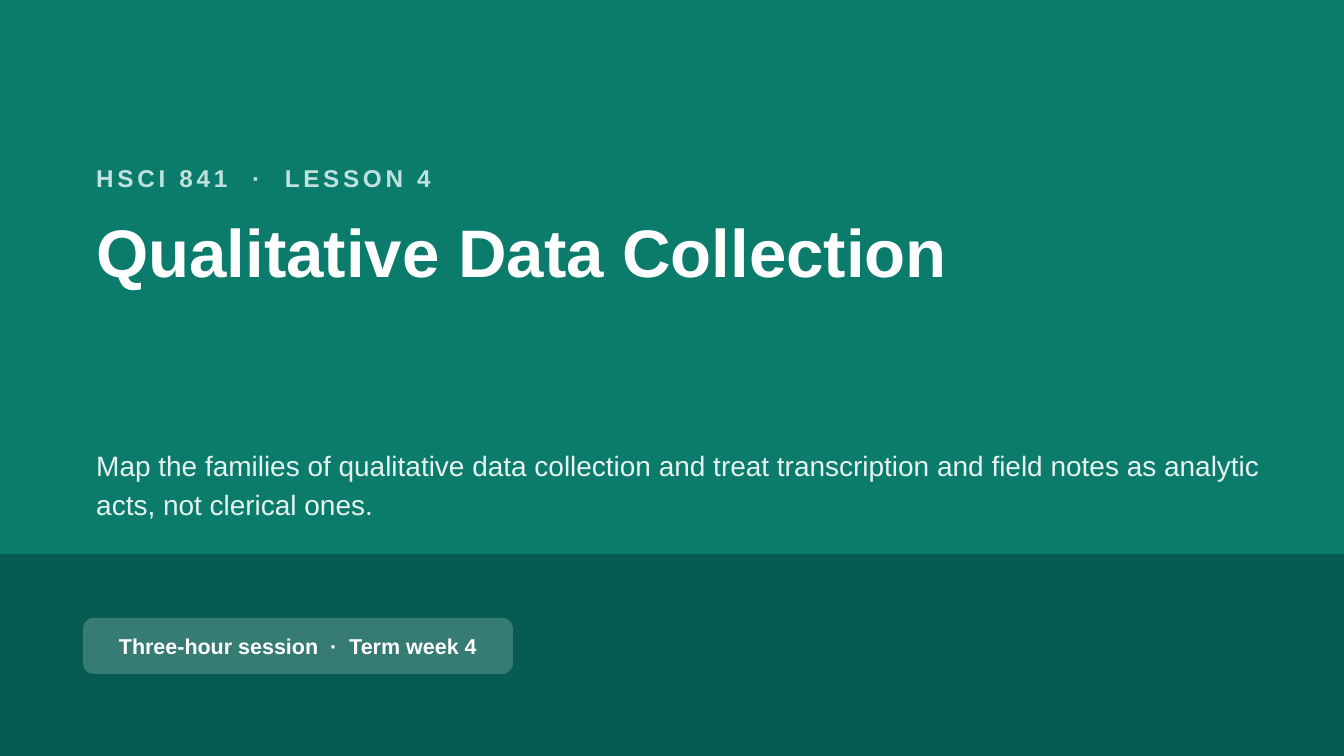
from pptx import Presentation
from pptx import util as u
from pptx.dml.color import RGBColor
from pptx.enum import shapes, text
from pptx.oxml.ns import qn
from lxml import etree

PX = 914400 / 134.4
GREEN = RGBColor(0x0B, 0x7B, 0x6B)
DARK = RGBColor(0x06, 0x5C, 0x50)
MINT = RGBColor(0xBF, 0xE3, 0xDC)
PALE = RGBColor(0xE6, 0xF3, 0xF0)
WHITE = RGBColor(0xFF, 0xFF, 0xFF)
LEFT, WIDE = 83, 1196
TOP, MID = text.MSO_ANCHOR.TOP, text.MSO_ANCHOR.MIDDLE


def px(*nums):
    return [u.Emu(round(n * PX)) for n in nums]


def write(shape, words, size, color, bold, anchor, lines=None):
    frame = shape.text_frame
    frame.word_wrap = True
    frame.vertical_anchor = anchor
    para = frame.paragraphs[0]
    para.text = words
    if lines:
        para.line_spacing = lines
    font = para.font
    font.name, font.size, font.bold = "Arial", u.Pt(size), bold
    font.color.rgb = color
    return para


deck = Presentation()
deck.slide_width, deck.slide_height = px(1344, 756)
slide = deck.slides.add_slide(deck.slide_layouts[6])
slide.background.fill.solid()
slide.background.fill.fore_color.rgb = GREEN

# Footer band
band = slide.shapes.add_shape(shapes.MSO_SHAPE.RECTANGLE, *px(0, 554, 1344, 202))
band.shadow.inherit = False
band.fill.solid()
band.fill.fore_color.rgb = DARK
band.line.fill.background()

# Course line, title and summary
rows = [
    (151, 54, "HSCI 841  ·  LESSON 4", 13, MINT, True, MID, None),
    (202, 208, "Qualitative Data Collection", 36, WHITE, True, TOP, 1.02),
    (437, 108, "Map the families of qualitative data collection and treat "
     "transcription and field notes as analytic acts, not clerical ones.",
     15, PALE, False, TOP, 1.15),
]
paras = []
for top, high, *style in rows:
    box = slide.shapes.add_textbox(*px(LEFT, top, WIDE, high))
    paras.append(write(box, *style))

# Wide letter spacing on the course line
paras[0].runs[0].font._element.set("spc", "200")

# Session pill
pill = slide.shapes.add_shape(shapes.MSO_SHAPE.ROUNDED_RECTANGLE, *px(LEFT, 618, 430, 56))
pill.adjustments[0] = 0.19
pill.shadow.inherit = False
pill.fill.solid()
pill.fill.fore_color.rgb = WHITE
pill.line.fill.background()
tint = pill._element.spPr.find(qn("a:solidFill"))[0]
etree.SubElement(tint, qn("a:alpha")).set("val", "20000")
label = write(pill, "Three-hour session  ·  Term week 4", 11.5, WHITE, True, MID)
label.alignment = text.PP_ALIGN.CENTER

deck.save("out.pptx")
